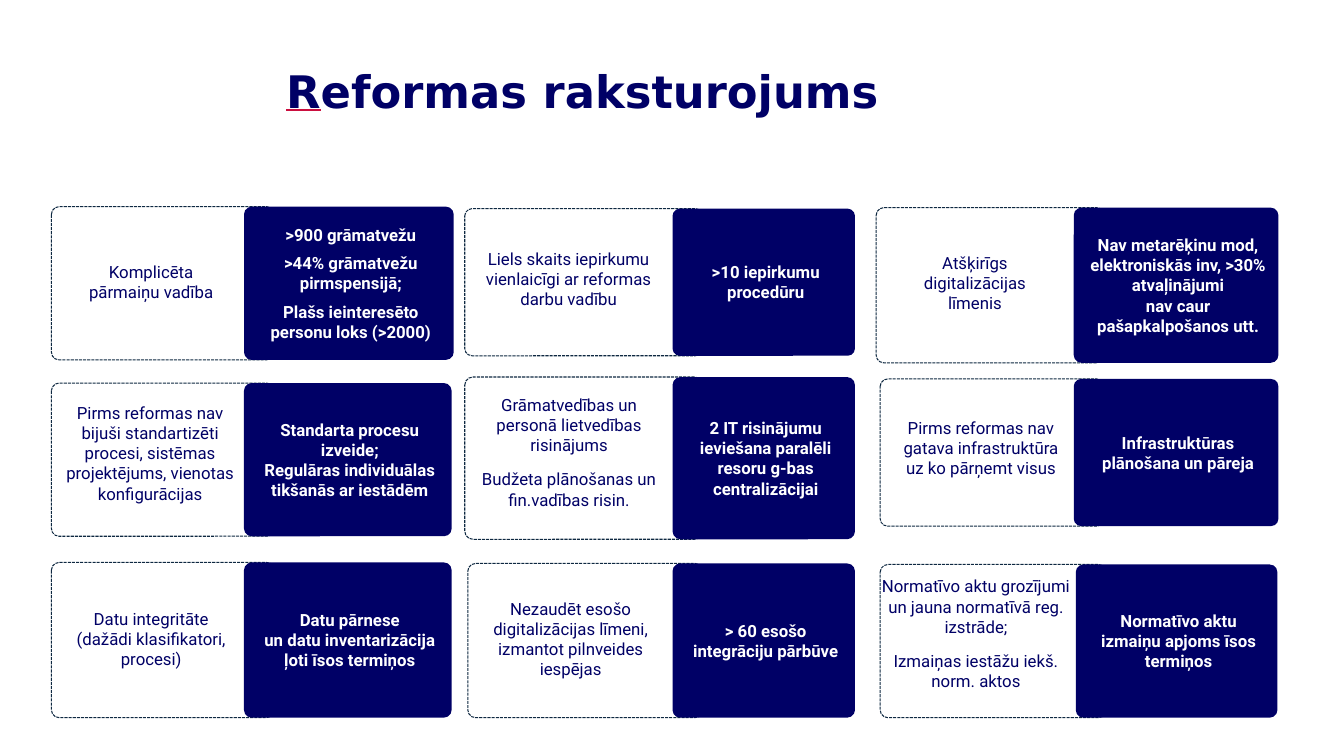
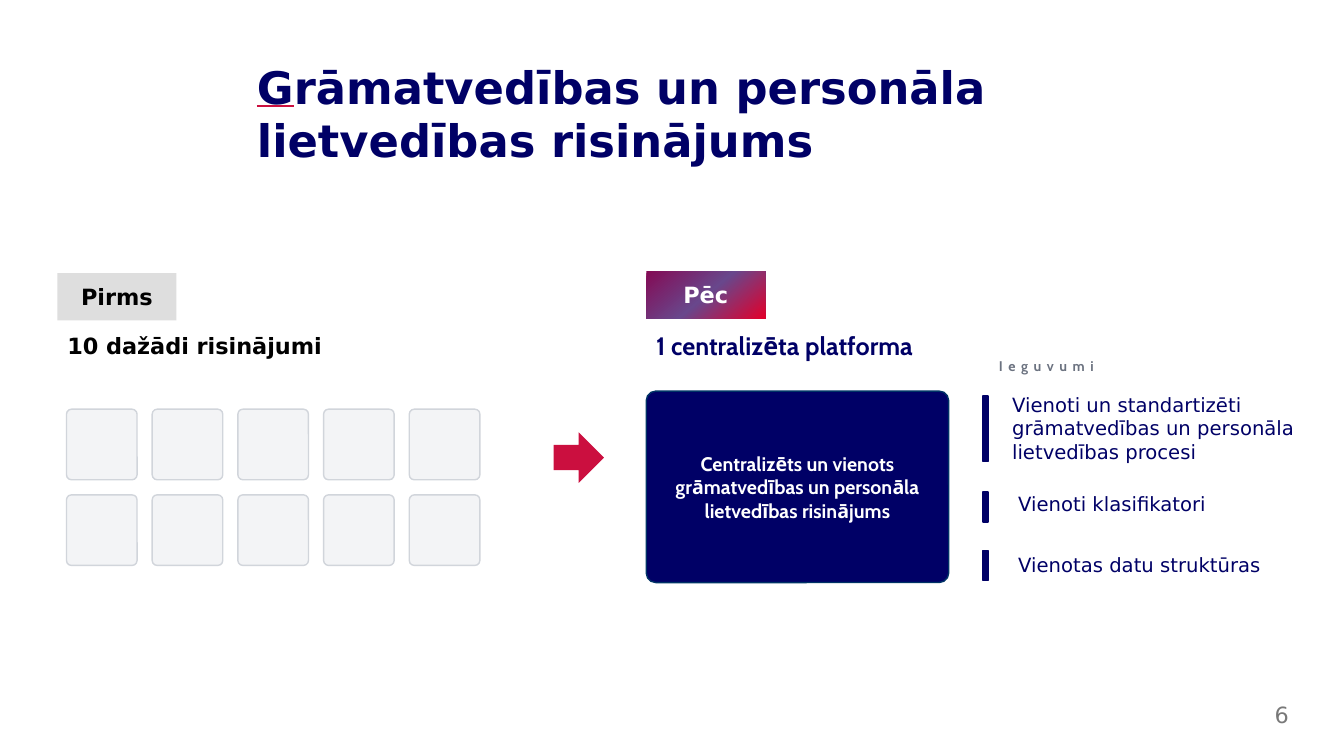
import copy

import lxml.etree
import pptx
import pptx.dml.color
import pptx.enum.dml
import pptx.enum.shapes
import pptx.enum.text
import pptx.oxml.ns
import pptx.util

RGBColor = pptx.dml.color.RGBColor
SHAPE = pptx.enum.shapes.MSO_SHAPE
ALIGN = pptx.enum.text.PP_ALIGN
ANCHOR = pptx.enum.text.MSO_ANCHOR
qn = pptx.oxml.ns.qn

NAVY = RGBColor(0x00, 0x00, 0x66)
WHITE = RGBColor(0xFF, 0xFF, 0xFF)
BLACK = RGBColor(0x00, 0x00, 0x00)
RED = RGBColor(0xCB, 0x0F, 0x3F)
INK = RGBColor(0x0E, 0x28, 0x41)
EDGE = RGBColor(0x00, 0x33, 0x66)
TILE = RGBColor(0xF3, 0xF4, 0xF6)
TILE_EDGE = RGBColor(0xD1, 0xD5, 0xDB)
TAG_GRAY = RGBColor(0xDE, 0xDE, 0xDE)
NOTE_GRAY = RGBColor(0x6B, 0x72, 0x80)
PAGE_GRAY = RGBColor(0x79, 0x79, 0x79)
GRADIENT = [
    (0, RGBColor(0x84, 0x0B, 0x55)),
    (0.51, RGBColor(0x69, 0x47, 0x8C)),
    (1, RGBColor(0xE3, 0x00, 0x2B)),
]

SANS, ROBOTO, CABIN = "DejaVu Sans", "Roboto", "Cabin"
PX = 9144
OVERLAP = 30

CARDS = [
    ((51, 242, 450, 205, 152), (80, 242, 140, 75), ["Komplicēta pārmaiņu vadība"],
     [">900 grāmatvežu", ">44% grāmatvežu pirmspensijā;", "Plašs ieinteresēto personu loks (>2000)"], 6),
    ((51, 242, 448, 380, 152), (56, 382, 186, 135),
     ["Pirms reformas nav bijuši standartizēti procesi, sistēmas projektējums, vienotas konfigurācijas"],
     ["Standarta procesu izveide;", "Regulāras individuālas tikšanās ar iestādēm"], 0),
    ((51, 242, 448, 558, 154), (65, 596, 170, 75),
     ["Datu integritāte (dažādi klasifikatori, procesi)"],
     ["Datu pārnese\vun datu inventarizācija ļoti īsos termiņos"], 0),
    ((461, 667, 848, 207, 146), (470, 239, 188, 75),
     ["Liels skaits iepirkumu vienlaicīgi ar reformas darbu vadību"],
     [">10 iepirkumu procedūru"], 0),
    ((461, 667, 848, 374, 161), (466, 384, 197, 129),
     ["Grāmatvedības un personā lietvedības risinājums", "Budžeta plānošanas un fin.vadības risin."],
     ["2 IT risinājumu ieviešana paralēli resoru g-bas centralizācijai"], 0),
    ((464, 667, 848, 559, 153), (477, 586, 178, 95),
     ["Nezaudēt esošo digitalizācijas līmeni, izmantot pilnveides iespējas"],
     ["> 60 esošo integrāciju pārbūve"], 0),
    ((869, 1065, 1268, 206, 154), (896, 243, 142, 75), ["Atšķirīgs digitalizācijas līmenis"],
     ["Nav metarēķinu mod, elektroniskās inv, >30% atvaļinājumi\vnav caur pašapkalpošanos utt."], 0),
    ((873, 1065, 1268, 376, 146), (892, 397, 162, 95),
     ["Pirms reformas nav gatava infrastruktūra uz ko pārņemt visus"],
     ["Infrastruktūras plānošana un pāreja"], 0),
    ((873, 1067, 1267, 560, 152), (869, 554, 198, 149),
     ["Normatīvo aktu grozījumi un jauna normatīvā reg. izstrāde;", "Izmaiņas iestāžu iekš. norm. aktos"],
     ["Normatīvo aktu izmaiņu apjoms īsos termiņos"], 0),
]

BENEFITS = [
    (393, 65, (994, 387, 300, 75), "Vienoti un standartizēti grāmatvedības un personāla lietvedības procesi"),
    (488, 30, (1000, 480, 300, 40), "Vienoti klasifikatori"),
    (546, 30, (1000, 540, 300, 40), "Vienotas datu struktūras"),
]


class Deck:
    def __init__(self):
        self.prs = pptx.Presentation()
        self.prs.slide_width = 1333 * PX
        self.prs.slide_height = 750 * PX
        self.s = None

    def new_slide(self):
        self.s = self.prs.slides.add_slide(self.prs.slide_layouts[6])

    def style(self, r, size, font, color, bold):
        r.font.size = pptx.util.Pt(size)
        r.font.name = font
        r.font.bold = bold
        r.font.color.rgb = color

    def fill_text(self, sp, paras, size, font, color, bold=False, align=ALIGN.LEFT,
                  anchor=ANCHOR.MIDDLE, insets=(10, 5, 10, 5), gap=0, after=0):
        tf = sp.text_frame
        tf.word_wrap = True
        tf.vertical_anchor = anchor
        tf.margin_left, tf.margin_top, tf.margin_right, tf.margin_bottom = (v * PX for v in insets)
        for i, text in enumerate(paras):
            p = tf.add_paragraph() if i else tf.paragraphs[0]
            p.text = text
            p.alignment = align
            p.space_after = pptx.util.Pt(after)
            if i:
                p.space_before = pptx.util.Pt(gap)
            for r in p.runs:
                self.style(r, size, font, color, bold)
            for br in p._p.findall(qn("a:br")):
                br.append(copy.deepcopy(p.runs[0]._r.rPr))
        return tf

    def text(self, box, paras, size, font, color, **options):
        sp = self.s.shapes.add_textbox(*(v * PX for v in box))
        return self.fill_text(sp, paras, size, font, color, **options)

    def shape(self, kind, box, fill=None, line=None, width=1, radius=None):
        sp = self.s.shapes.add_shape(kind, *(v * PX for v in box))
        sp.shadow.inherit = False
        if radius is not None:
            sp.adjustments[0] = radius
        if fill is None:
            sp.fill.background()
        else:
            sp.fill.solid()
            sp.fill.fore_color.rgb = fill
        if line is None:
            sp.line.fill.background()
        else:
            sp.line.color.rgb = line
            sp.line.width = pptx.util.Pt(width)
        return sp

    def gradient(self, sp):
        sp.fill.gradient()
        sp.fill.gradient_angle = 310
        gs = sp.fill.gradient_stops[0]._gs
        gs.addnext(copy.deepcopy(gs))
        for stop, (position, color) in zip(sp.fill.gradient_stops, GRADIENT):
            stop.position = position
            stop.color.rgb = color

    def title(self, box, text):
        tf = self.text(box, [text[0]], 32, SANS, NAVY, bold=True, anchor=ANCHOR.TOP)
        p = tf.paragraphs[0]
        first = p.runs[0]
        first.font.underline = True
        line = lxml.etree.Element(qn("a:uFill"))
        solid = lxml.etree.SubElement(line, qn("a:solidFill"))
        lxml.etree.SubElement(solid, qn("a:srgbClr")).set("val", str(RED))
        first._r.rPr.find(qn("a:latin")).addprevious(line)
        rest = p.add_run()
        rest.text = text[1:]
        self.style(rest, 32, SANS, NAVY, True)

    def card(self, frame, label_box, label, answer, after):
        left, split, right, top, height = frame
        outline = self.shape(SHAPE.ROUNDED_RECTANGLE, (left, top, split - left + OVERLAP, height),
                             line=INK, width=0.75, radius=0.05)
        outline.line.dash_style = pptx.enum.dml.MSO_LINE.SQUARE_DOT
        self.text(label_box, label, 12, ROBOTO, NAVY, align=ALIGN.CENTER, insets=(0, 0, 0, 0), gap=10)
        sp = self.shape(SHAPE.ROUNDED_RECTANGLE, (split, top, right - split, height), NAVY, radius=0.05)
        self.fill_text(sp, answer, 12, ROBOTO, WHITE, bold=True, align=ALIGN.CENTER,
                       insets=(12, 5, 8, 5), after=after)

    def tag(self, box, text, color, fill=None):
        sp = self.shape(SHAPE.RECTANGLE, box, fill)
        if fill is None:
            self.gradient(sp)
        self.fill_text(sp, [text], 16, SANS, color, bold=True, align=ALIGN.CENTER)

    def benefit(self, top, height, box, text):
        self.shape(SHAPE.RECTANGLE, (975, top, 5, height), NAVY, NAVY)
        self.text(box, [text], 14, SANS, NAVY)


def reform_slide(deck):
    deck.new_slide()
    deck.title((274, 58, 755, 80), "Reformas raksturojums")
    for card in CARDS:
        deck.card(*card)


def solution_slide(deck):
    deck.new_slide()
    deck.title((245, 54, 755, 114), "Grāmatvedības un personāla lietvedības risinājums")
    deck.tag((57, 271, 118, 47), "Pirms", BLACK, TAG_GRAY)
    deck.text((57, 318, 500, 50), ["10 dažādi risinājumi"], 16, SANS, BLACK, bold=True)
    for row in range(2):
        for col in range(5):
            deck.shape(SHAPE.ROUNDED_RECTANGLE, (66 + 85 * col, 406 + 85 * row, 70, 70),
                       TILE, TILE_EDGE, radius=0.07)
    deck.shape(SHAPE.RIGHT_ARROW, (549, 429, 50, 50), RED)

    deck.tag((641, 269, 118, 47), "Pēc", WHITE)
    deck.text((641, 318, 600, 50), ["1 centralizēta platforma"], 18, CABIN, NAVY, bold=True)
    platform = deck.shape(SHAPE.ROUNDED_RECTANGLE, (641, 388, 300, 190), NAVY, EDGE, radius=0.05)
    deck.fill_text(platform, ["Centralizēts un vienots grāmatvedības un personāla lietvedības risinājums"],
                   14, CABIN, WHITE, bold=True, align=ALIGN.CENTER)

    heading = deck.text((981, 348, 300, 30), ["Ieguvumi"], 10, CABIN, NOTE_GRAY, bold=True)
    heading.paragraphs[0].runs[0]._r.rPr.set("spc", "400")
    for benefit in BENEFITS:
        deck.benefit(*benefit)
    deck.text((1244, 692, 44, 33), ["6"], 16, SANS, PAGE_GRAY, align=ALIGN.RIGHT)


def main():
    deck = Deck()
    reform_slide(deck)
    solution_slide(deck)
    deck.prs.save("out.pptx")


if __name__ == "__main__":
    main()
